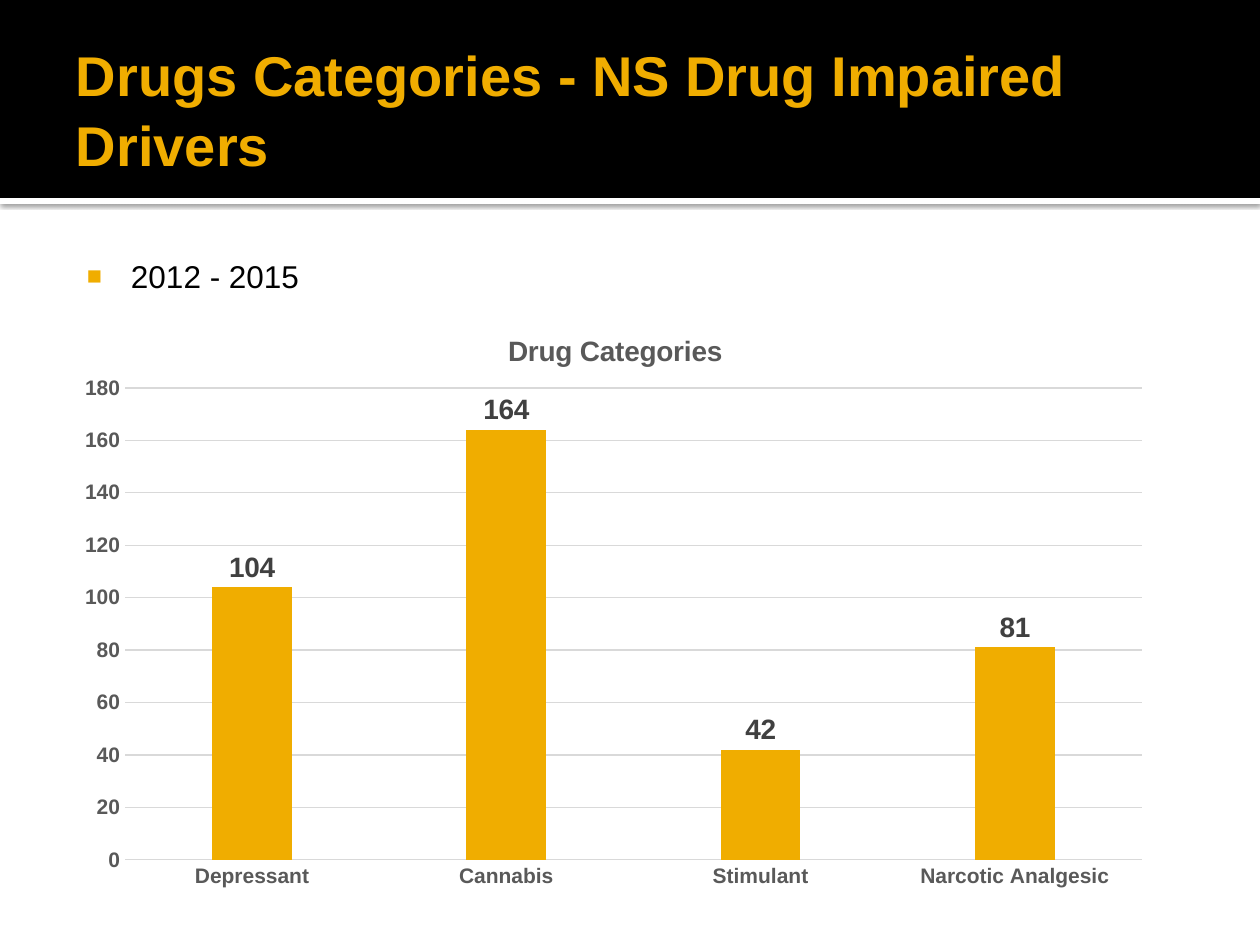
"""Builds a slide charting drug categories among impaired drivers."""
from dataclasses import dataclass

from lxml import etree
from pptx import Presentation
from pptx.chart.data import CategoryChartData
from pptx.dml.color import RGBColor
from pptx.enum.chart import XL_CHART_TYPE, XL_LABEL_POSITION, XL_TICK_MARK
from pptx.enum.shapes import MSO_SHAPE
from pptx.enum.text import MSO_ANCHOR
from pptx.oxml import parse_xml
from pptx.oxml.ns import nsdecls, qn
from pptx.util import Emu, Pt

COLUMNS = XL_CHART_TYPE.COLUMN_CLUSTERED
OUTSIDE_END = XL_LABEL_POSITION.OUTSIDE_END
NO_TICK = XL_TICK_MARK.NONE
RECTANGLE = MSO_SHAPE.RECTANGLE
TOP, MIDDLE = MSO_ANCHOR.TOP, MSO_ANCHOR.MIDDLE

TITLE = "Drugs Categories - NS Drug Impaired Drivers"
PERIOD = "2012 - 2015"
CHART_TITLE = "Drug Categories"
SERIES_NAME = "Series 1"
CATEGORY_COUNTS = {
    "Depressant": 104,
    "Cannabis": 164,
    "Stimulant": 42,
    "Narcotic Analgesic": 81,
}

SLIDE_SIZE = (1260, 945)
HEADER_BOX = (0, 0, 1260, 198)
STRIPE_BOX = (0, 198, 1260, 6)
TITLE_BOX = (63, 21, 1101, 173)
PERIOD_BOX = (63, 244, 1134, 638)
CHART_BOX = (63, 304, 1101, 595)
PLOT_BOX = (125, 388, 1017, 472)
CHART_TITLE_AT = (503, 328)
TITLE_INSETS = (13, 6, 6, 6)
PERIOD_INSETS = (8, 13, 13, 6)
BULLET_MARGIN, BULLET_INDENT = 60, -44


@dataclass(frozen=True)
class Theme:
    font: str = "Arial"
    chart_font: str = "Cabin"
    accent: str = "F0AD00"
    black: str = "000000"
    white: str = "FFFFFF"
    axis_text: str = "595959"
    label_text: str = "404040"
    grid: str = "D9D9D9"
    title_size: int = 32
    body_size: int = 18
    heading_size: int = 16
    axis_size: int = 12
    chart_size: int = 10
    line_width: float = 0.75


THEME = Theme()


def px(length):
    return Emu(round(length * 914400 / 126))


def box(lengths):
    return [px(length) for length in lengths]


def style_font(font, size, color, bold=False, name=THEME.font):
    font.name = name
    font.size = Pt(size)
    font.bold = bold
    font.color.rgb = RGBColor.from_string(color)


def style_line(line):
    line.color.rgb = RGBColor.from_string(THEME.grid)
    line.width = Pt(THEME.line_width)


def add_band(slide, bounds, color):
    band = slide.shapes.add_shape(RECTANGLE, *box(bounds))
    band.shadow.inherit = False
    band.fill.solid()
    band.fill.fore_color.rgb = RGBColor.from_string(color)
    band.line.fill.background()
    return band


def add_shadow(shape):
    effects = shape._element.spPr.find(qn("a:effectLst"))
    effects.append(parse_xml(
        f'<a:outerShdw {nsdecls("a")} blurRad="{Pt(2.5)}" dist="{Pt(0.8)}" '
        f'dir="5400000" rotWithShape="0"><a:srgbClr val="{THEME.black}">'
        '<a:alpha val="60000"/></a:srgbClr></a:outerShdw>'))


def add_text(slide, bounds, insets, anchor, text, size, color, bold=False):
    frame = slide.shapes.add_textbox(*box(bounds)).text_frame
    frame.word_wrap = True
    frame.vertical_anchor = anchor
    (frame.margin_left, frame.margin_top,
     frame.margin_right, frame.margin_bottom) = box(insets)
    paragraph = frame.paragraphs[0]
    run = paragraph.add_run()
    run.text = text
    style_font(run.font, size, color, bold)
    return paragraph


def add_bullet(paragraph):
    properties = paragraph._p.get_or_add_pPr()
    properties.set("marL", str(px(BULLET_MARGIN)))
    properties.set("indent", str(px(BULLET_INDENT)))
    color = etree.SubElement(properties, qn("a:buClr"))
    etree.SubElement(color, qn("a:srgbClr"), val=THEME.accent)
    etree.SubElement(properties, qn("a:buSzPct"), val="80000")
    etree.SubElement(properties, qn("a:buFont"), typeface=THEME.font)
    etree.SubElement(properties, qn("a:buChar"), char="■")


def place(element, index, settings):
    for layout in element.findall(qn("c:layout")):
        element.remove(layout)
    layout = etree.Element(qn("c:layout"))
    manual = etree.SubElement(layout, qn("c:manualLayout"))
    for name, value in settings.items():
        etree.SubElement(manual, qn(f"c:{name}"), val=str(value))
    element.insert(index, layout)


def fractions(left, top, *extent):
    chart_left, chart_top, width, height = CHART_BOX
    values = [(left - chart_left) / width, (top - chart_top) / height]
    values += [length / whole for length, whole in zip(extent, (width, height))]
    return {name: round(value, 4) for name, value in zip("xywh", values)}


def add_category_chart(slide):
    data = CategoryChartData()
    data.categories = list(CATEGORY_COUNTS)
    data.add_series(SERIES_NAME, list(CATEGORY_COUNTS.values()))
    chart = slide.shapes.add_chart(COLUMNS, *box(CHART_BOX), data).chart
    style_font(chart.font, THEME.chart_size, THEME.black, name=THEME.chart_font)
    chart.has_legend = False

    run = chart.chart_title.text_frame.paragraphs[0].add_run()
    run.text = CHART_TITLE
    style_font(run.font, THEME.heading_size, THEME.axis_text, True)

    for axis in (chart.category_axis, chart.value_axis):
        axis.major_tick_mark = axis.minor_tick_mark = NO_TICK
        style_font(axis.tick_labels.font, THEME.axis_size, THEME.axis_text, True)
    style_line(chart.category_axis.format.line)
    chart.value_axis.format.line.fill.background()
    style_line(chart.value_axis.major_gridlines.format.line)
    chart.value_axis.minimum_scale = 0
    chart.value_axis.maximum_scale = 180
    chart.value_axis.major_unit = 20

    plot = chart.plots[0]
    plot.gap_width, plot.overlap, plot.vary_by_categories = 219, -27, False
    fill = plot.series[0].format.fill
    fill.solid()
    fill.fore_color.rgb = RGBColor.from_string(THEME.accent)
    labels = plot.series[0].data_labels
    labels.show_value = True
    labels.position = OUTSIDE_END
    style_font(labels.font, THEME.heading_size, THEME.label_text, True)

    edges = {"xMode": "edge", "yMode": "edge"}
    place(chart.chart_title._element, 1, edges | fractions(*CHART_TITLE_AT))
    place(chart._chartSpace.chart.plotArea, 0,
          {"layoutTarget": "inner"} | edges | fractions(*PLOT_BOX))


def main():
    presentation = Presentation()
    presentation.slide_width, presentation.slide_height = box(SLIDE_SIZE)
    slide = presentation.slides.add_slide(presentation.slide_layouts[6])
    add_shadow(add_band(slide, STRIPE_BOX, THEME.white))
    add_band(slide, HEADER_BOX, THEME.black)
    title = add_text(slide, TITLE_BOX, TITLE_INSETS, MIDDLE, TITLE,
                     THEME.title_size, THEME.accent, True)
    title.line_spacing = 1.04
    add_bullet(add_text(slide, PERIOD_BOX, PERIOD_INSETS, TOP, PERIOD,
                        THEME.body_size, THEME.black))
    add_category_chart(slide)
    presentation.save("out.pptx")


if __name__ == "__main__":
    main()
